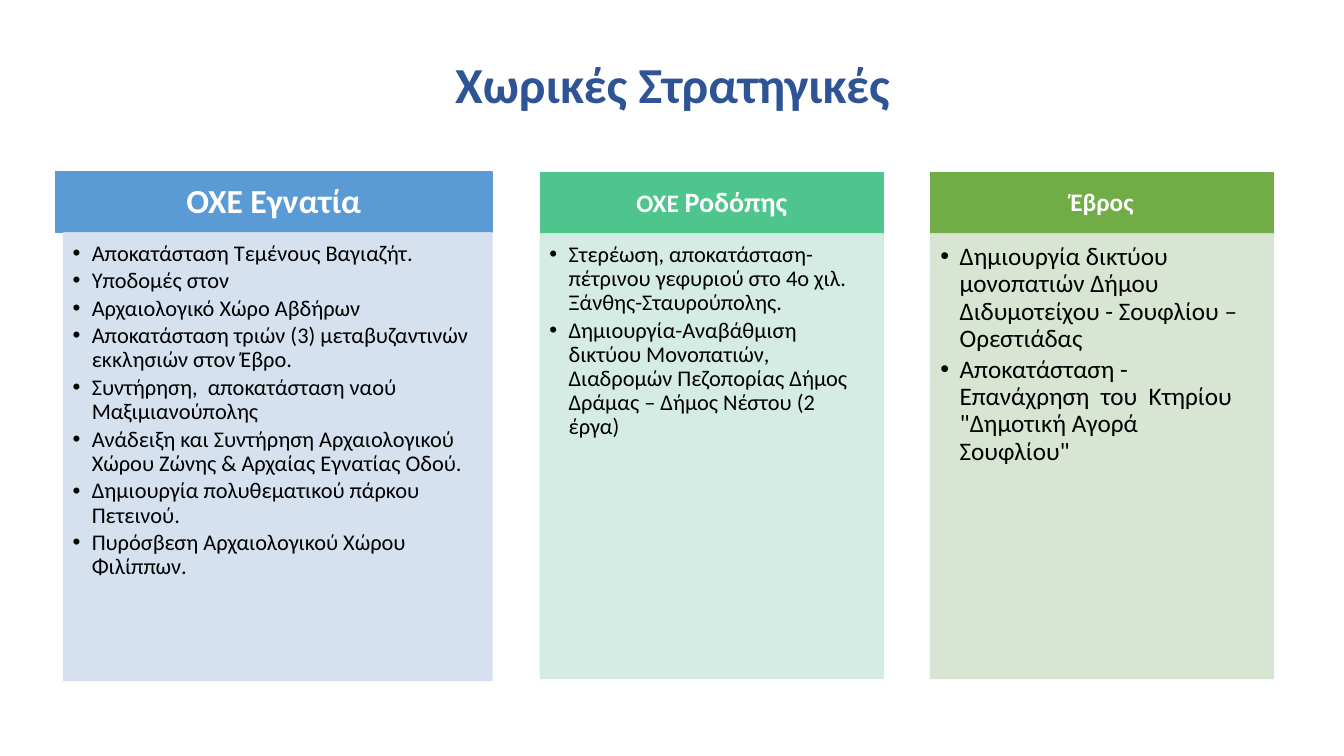
from dataclasses import dataclass

from lxml.etree import SubElement as Sub
from pptx import Presentation
from pptx.dml.color import RGBColor as Color
from pptx.enum.shapes import MSO_SHAPE as Shape
from pptx.enum.text import MSO_ANCHOR as Anchor, PP_ALIGN as Align
from pptx.oxml.ns import qn
from pptx.util import Inches, Pt


@dataclass(frozen=True)
class Theme:
    font: str = "Calibri"
    title: str = "2F5496"
    light: str = "FFFFFF"
    dark: str = "000000"
    blue: tuple = ("5B9BD5", "D2DEEF")
    mint: tuple = ("4DC58D", "D0EAE1")
    green: tuple = ("70AD47", "D5E3CF")
    huge: int = 36
    large: int = 24
    mid: int = 20
    base: int = 18
    small: int = 16


THEME = Theme()
HEAD = 0.61

EGNATIA = [
    "Αποκατάσταση Τεμένους Βαγιαζήτ.",
    "Υποδομές στον",
    "Αρχαιολογικό Χώρο Αβδήρων",
    "Αποκατάσταση τριών (3) μεταβυζαντινών εκκλησιών στον Έβρο.",
    "Συντήρηση,  αποκατάσταση ναού Μαξιμιανούπολης",
    "Ανάδειξη και Συντήρηση Αρχαιολογικού Χώρου Ζώνης & Αρχαίας Εγνατίας Οδού.",
    "Δημιουργία πολυθεματικού πάρκου Πετεινού.",
    "Πυρόσβεση Αρχαιολογικού Χώρου Φιλίππων.",
]
RODOPI = [
    "Στερέωση, αποκατάσταση-πέτρινου γεφυριού στο 4ο χιλ. Ξάνθης-Σταυρούπολης.",
    "Δημιουργία-Αναβάθμιση δικτύου Μονοπατιών, Διαδρομών Πεζοπορίας Δήμος "
    "Δράμας – Δήμος Νέστου (2 έργα)",
]
EVROS = [
    "Δημιουργία δικτύου μονοπατιών Δήμου Διδυμοτείχου - Σουφλίου – Ορεστιάδας",
    'Αποκατάσταση - Επανάχρηση  του  Κτηρίου "Δημοτική Αγορά  Σουφλίου"',
]


def add_run(para, text, size, color, bold=False):
    run = para.add_run()
    run.text = text
    font = run.font
    font.name, font.size, font.bold = THEME.font, Pt(size), bold
    font.color.rgb = Color.from_string(color)


def set_para(para, align, after=0):
    para.alignment = align
    para.line_spacing = 0.9
    para.space_before = Pt(0)
    para.space_after = Pt(after)


def add_bullet(para):
    props = para._p.get_or_add_pPr()
    props.set("marL", str(Inches(0.19)))
    props.set("indent", str(Inches(-0.19)))
    Sub(props, qn("a:buFont"), typeface="Arial")
    Sub(props, qn("a:buChar"), char="•")


def set_alpha(shape, share):
    for color in shape._element.spPr.iter(qn("a:srgbClr")):
        Sub(color, qn("a:alpha"), val=str(share * 1000))


def add_box(slide, place, color, inset, anchor):
    box = slide.shapes.add_shape(Shape.RECTANGLE, *map(Inches, place))
    box.shadow.inherit = False
    box.fill.solid()
    box.fill.fore_color.rgb = Color.from_string(color)
    box.line.color.rgb = Color.from_string(color)
    box.line.width = Pt(1)
    frame = box.text_frame
    frame.word_wrap = True
    frame.vertical_anchor = anchor
    (frame.margin_left, frame.margin_top,
     frame.margin_right, frame.margin_bottom) = map(Inches, inset)
    return box


def add_head(slide, place, color, runs):
    side, edge = (0.19, 0.11) if runs[0][1] == THEME.large else (0.14, 0.08)
    box = add_box(slide, place, color, (side, edge, side, edge), Anchor.MIDDLE)
    para = box.text_frame.paragraphs[0]
    set_para(para, Align.CENTER)
    for text, size in runs:
        add_run(para, text, size, THEME.light, True)


def add_list(slide, place, color, items, size):
    inset = (0.1, 0.1, 0.14, 0.16) if size > THEME.small else (0.09, 0.09, 0.12, 0.14)
    box = add_box(slide, place, color, inset, Anchor.TOP)
    set_alpha(box, 90)
    frame = box.text_frame
    for i, item in enumerate(items):
        para = frame.add_paragraph() if i else frame.paragraphs[0]
        set_para(para, Align.LEFT, 0.15 * size)
        add_bullet(para)
        add_run(para, item, size, THEME.dark)


def add_column(slide, left, top, width, height, tones, runs, items, size, shift=0):
    add_head(slide, (left, top, width, HEAD), tones[0], runs)
    place = (left + shift, top + HEAD, width - shift, height)
    add_list(slide, place, tones[1], items, size)


def add_title(slide, text):
    title = slide.shapes.title
    title.left, title.top = Inches(0.92), Inches(0.4)
    title.width, title.height = Inches(11.5), Inches(0.93)
    title.text_frame.vertical_anchor = Anchor.MIDDLE
    para = title.text_frame.paragraphs[0]
    set_para(para, Align.CENTER)
    add_run(para, text, THEME.huge, THEME.title, True)


def main():
    deck = Presentation()
    deck.slide_width, deck.slide_height = Inches(13.33), Inches(7.5)
    slide = deck.slides.add_slide(deck.slide_layouts[5])
    add_title(slide, "Χωρικές Στρατηγικές")
    add_column(slide, 0.55, 1.7, 4.33, 4.44, THEME.blue,
               [("ΟΧΕ Εγνατία", THEME.large)], EGNATIA, THEME.small, 0.08)
    add_column(slide, 5.36, 1.71, 3.4, 4.41, THEME.mint,
               [("ΟΧΕ ", THEME.base), ("Ροδόπης", THEME.mid)], RODOPI, THEME.small)
    add_column(slide, 9.23, 1.71, 3.4, 4.41, THEME.green,
               [("Έβρος", THEME.base)], EVROS, THEME.base)
    deck.save("out.pptx")


if __name__ == "__main__":
    main()
